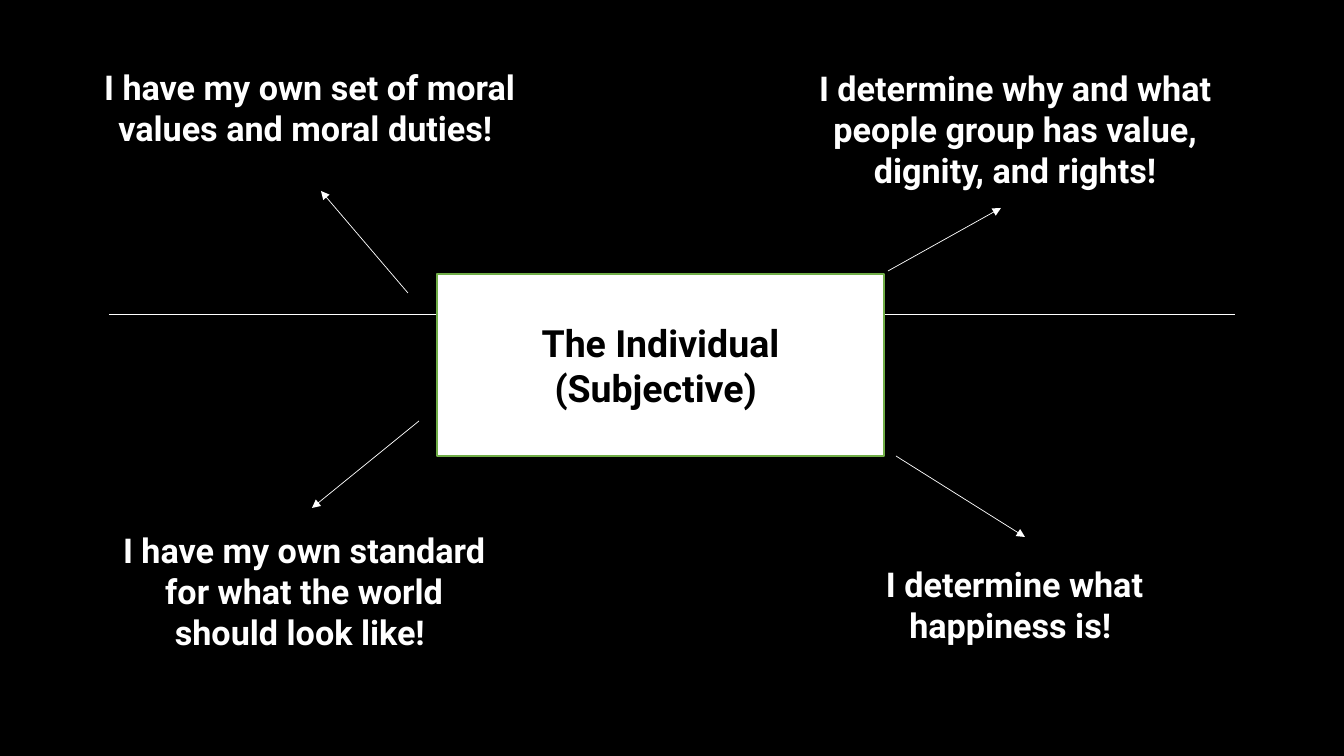
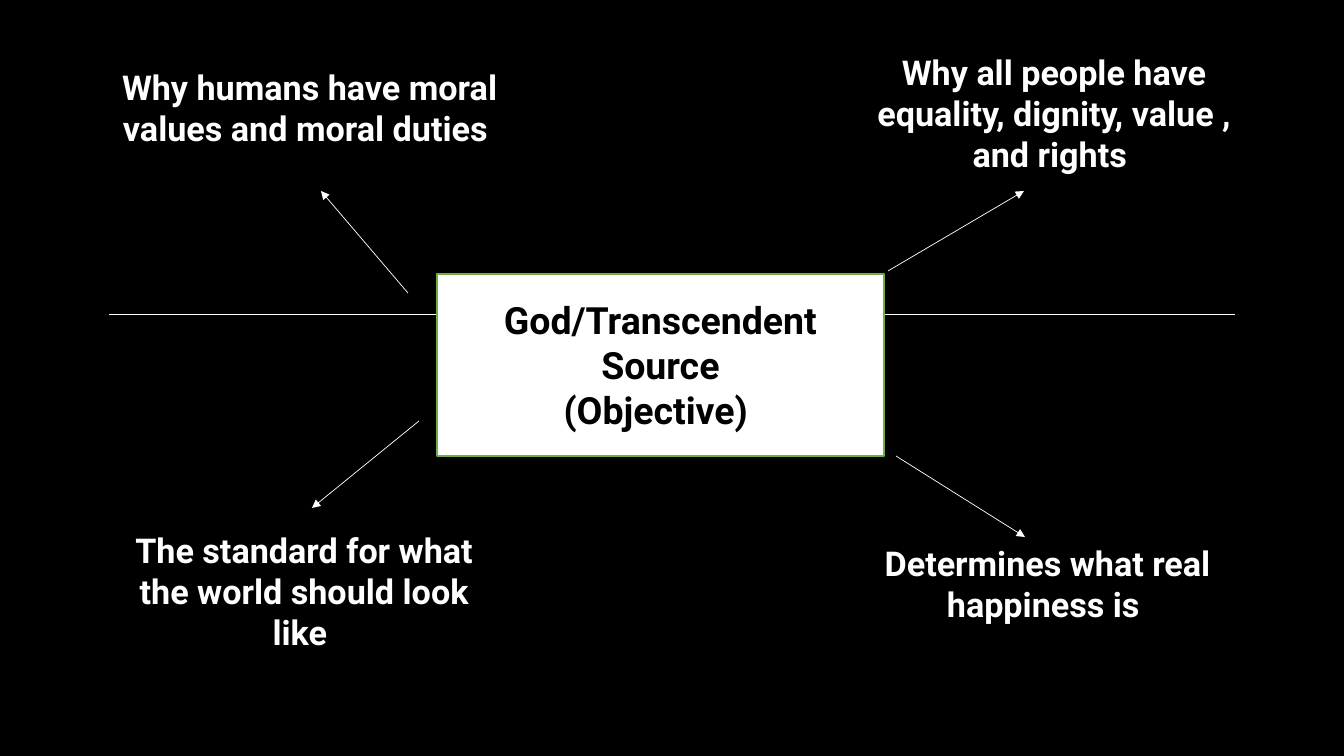
from lxml import etree
from pptx import Presentation
from pptx.dml.color import RGBColor
from pptx.enum.shapes import MSO_CONNECTOR, MSO_SHAPE
from pptx.enum.text import MSO_ANCHOR, PP_ALIGN
from pptx.oxml.ns import qn
from pptx.util import Emu, Pt

# Content
SLIDES = [
    {
        "center": ["The Individual", "(Subjective) "],
        "claims": [
            ("I have my own standard for what the world should look like! ", (109, 524, 390, 134)),
            ("I determine what happiness is! ", (810, 558, 409, 93)),
            ("I have my own set of moral values and moral duties! ", (86, 61, 447, 93)),
            ("I determine why and what people group has value, dignity, and rights!",
             (804, 62, 422, 134)),
        ],
        "upper_right_tip": (1001, 208),
    },
    {
        "center": ["God/Transcendent Source", "(Objective) "],
        "claims": [
            ("The standard for what the world should look like ", (109, 524, 390, 134)),
            ("Determines what real happiness is ", (843, 537, 409, 93)),
            ("Why humans have moral values and moral duties ", (86, 61, 447, 93)),
            ("Why all people have equality, dignity, value , and rights ", (843, 46, 422, 134)),
        ],
        "upper_right_tip": (1024, 191),
    },
]

# Shared style and layout, in px
BLACK, WHITE, GREEN = "000000", "FFFFFF", "70AD47"
FONT = "Roboto"
WIDTH, HEIGHT = 1344, 756
CENTER_BOX = (437, 274, 447, 182)
HORIZON = ((109, 314), (1235, 314))
UPPER_RIGHT_START = (888, 271)
ARROWS = [
    ((408, 293), (321, 191)),
    ((896, 456), (1025, 537)),
    ((419, 421), (312, 508)),
]


def px(value):
    return Emu(round(value * 914400 / 100.8))


def color(value):
    return RGBColor.from_string(value)


def write(shape, lines, size=24.4, fill=WHITE, anchor=MSO_ANCHOR.TOP):
    frame = shape.text_frame
    frame.word_wrap = True
    frame.vertical_anchor = anchor
    for index, line in enumerate(lines):
        paragraph = frame.add_paragraph() if index else frame.paragraphs[0]
        paragraph.alignment = PP_ALIGN.CENTER
        run = paragraph.add_run()
        run.text = line
        run.font.name = FONT
        run.font.size = Pt(size)
        run.font.bold = True
        run.font.color.rgb = color(fill)


def add_line(slide, start, end, arrow=False):
    line = slide.shapes.add_connector(
        MSO_CONNECTOR.STRAIGHT, *map(px, start + end))
    line.line.color.rgb = color(WHITE)
    line.line.width = Pt(0.5)
    if arrow:
        outline = line.line._get_or_add_ln()
        etree.SubElement(outline, qn("a:tailEnd"), type="triangle")
    etree.SubElement(line._element.spPr, qn("a:effectLst"))


def add_center(slide, lines):
    box = slide.shapes.add_shape(MSO_SHAPE.FLOWCHART_PROCESS, *map(px, CENTER_BOX))
    box.shadow.inherit = False
    box.fill.solid()
    box.fill.fore_color.rgb = color(WHITE)
    box.line.color.rgb = color(GREEN)
    box.line.width = Pt(1)
    write(box, lines, size=26.8, fill=BLACK, anchor=MSO_ANCHOR.MIDDLE)


def build_slide(presentation, content):
    slide = presentation.slides.add_slide(presentation.slide_layouts[6])
    for text, place in content["claims"]:
        write(slide.shapes.add_textbox(*map(px, place)), [text])
    # The box covers the middle of the horizon line
    add_line(slide, *HORIZON)
    add_center(slide, content["center"])
    for start, end in ARROWS + [(UPPER_RIGHT_START, content["upper_right_tip"])]:
        add_line(slide, start, end, arrow=True)


def main():
    presentation = Presentation()
    presentation.slide_width, presentation.slide_height = px(WIDTH), px(HEIGHT)
    background = presentation.slide_master.background.fill
    background.solid()
    background.fore_color.rgb = color(BLACK)
    for content in SLIDES:
        build_slide(presentation, content)
    presentation.save("out.pptx")


if __name__ == "__main__":
    main()
